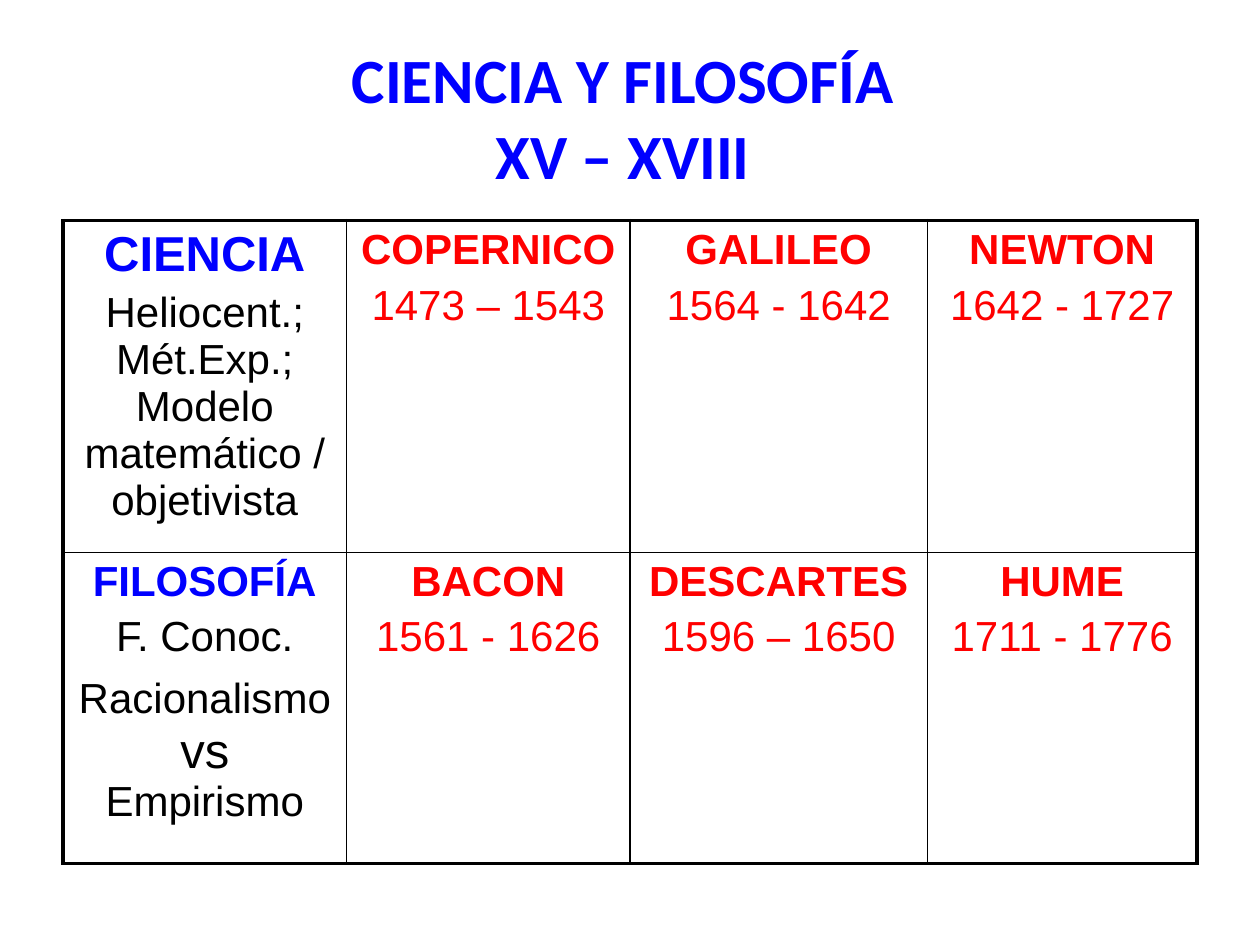
from dataclasses import dataclass

from lxml.etree import SubElement
from pptx import Presentation
from pptx.dml.color import RGBColor
from pptx.enum.text import MSO_ANCHOR as Anchor, PP_ALIGN as Align
from pptx.oxml.ns import qn
from pptx.util import Inches, Pt


@dataclass(frozen=True)
class Theme:
    """Hold the colours, fonts and sizes of the slide."""
    blue: str = "0000FF"
    red: str = "FF0000"
    black: str = "000000"
    title_font: str = "Calibri"
    body_font: str = "Arial"
    title_size: int = 36
    large: int = 28
    body: int = 24
    thin: float = 1
    thick: float = 2.25
    gap: float = 4.8


THEME = Theme()
COLUMN_WIDTHS = (2.25, 2.25, 2.36, 2.14)
ROW_HEIGHTS = (2.48, 2.47)


def person(name, years):
    """Return the two lines of a thinker's cell."""
    return [
        [(name, THEME.red, THEME.body, True)],
        [(years, THEME.red, THEME.body, False)],
    ]


def note(text, size=THEME.body):
    """Return one plain black span."""
    return text, THEME.black, size, False


SCIENCE = [
    [("CIENCIA", THEME.blue, THEME.large, True)],
    [note("Heliocent.; Mét.Exp.; Modelo matemático /objetivista")],
]
PHILOSOPHY = [
    [("FILOSOFÍA", THEME.blue, THEME.body, True)],
    [note("F. Conoc.")],
    [note("Racionalismo"), note(" vs ", THEME.large), note("Empirismo")],
]
ROWS = (
    (SCIENCE, person("COPERNICO", "1473 – 1543"),
     person("GALILEO", "1564 - 1642"), person("NEWTON", "1642 - 1727")),
    (PHILOSOPHY, person("BACON", "1561 - 1626"),
     person("DESCARTES", "1596 – 1650"), person("HUME", "1711 - 1776")),
)


def style_span(span, font, color, size, bold):
    """Format one run of text."""
    span.font.name = font
    span.font.size = Pt(size)
    span.font.bold = bold
    span.font.color.rgb = RGBColor.from_string(color)


def add_title(page, text):
    """Add the centred slide title."""
    box = page.shapes.add_textbox(Inches(0.5), Inches(0.3), Inches(9), Inches(1.25))
    frame = box.text_frame
    frame.word_wrap = True
    frame.vertical_anchor = Anchor.MIDDLE
    frame.text = text
    para = frame.paragraphs[0]
    para.alignment = Align.CENTER
    for span in para.runs:
        style_span(span, THEME.title_font, THEME.blue, THEME.title_size, True)


def set_borders(cell, widths):
    """Draw the left, right, top and bottom borders of a cell."""
    properties = cell._tc.get_or_add_tcPr()
    for side, width in zip("LRTB", widths):
        line = SubElement(properties, qn(f"a:ln{side}"), w=str(Pt(width)))
        fill = SubElement(line, qn("a:solidFill"))
        SubElement(fill, qn("a:srgbClr"), val=THEME.black)


def fill_cell(cell, lines):
    """Write centred lines of styled spans into a cell."""
    frame = cell.text_frame
    for index, spans in enumerate(lines):
        para = frame.add_paragraph() if index else frame.paragraphs[0]
        para.alignment = Align.CENTER
        if index:
            para.space_before = Pt(THEME.gap)
        for text, color, size, bold in spans:
            span = para.add_run()
            span.text = text
            style_span(span, THEME.body_font, color, size, bold)


def add_thinkers_table(page):
    """Add the table of science and philosophy with a thick outer frame."""
    last_row, last_column = len(ROWS) - 1, len(COLUMN_WIDTHS) - 1
    table = page.shapes.add_table(
        len(ROWS), len(COLUMN_WIDTHS), Inches(0.5), Inches(1.75),
        Inches(sum(COLUMN_WIDTHS)), Inches(sum(ROW_HEIGHTS))).table
    table.first_row = table.horz_banding = False
    for column, width in zip(table.columns, COLUMN_WIDTHS):
        column.width = Inches(width)
    for row, height in zip(table.rows, ROW_HEIGHTS):
        row.height = Inches(height)
    for r, contents in enumerate(ROWS):
        for c, lines in enumerate(contents):
            cell = table.cell(r, c)
            fill_cell(cell, lines)
            outer = (c == 0, c == last_column, r == 0, r == last_row)
            set_borders(cell, [THEME.thick if edge else THEME.thin for edge in outer])
            cell.fill.background()


def main():
    """Build and save the slide."""
    deck = Presentation()
    deck.slide_width, deck.slide_height = Inches(10), Inches(7.5)
    page = deck.slides.add_slide(deck.slide_layouts[6])
    add_title(page, "CIENCIA Y FILOSOFÍA \vXV – XVIII ")
    add_thinkers_table(page)
    deck.save("out.pptx")


if __name__ == "__main__":
    main()
